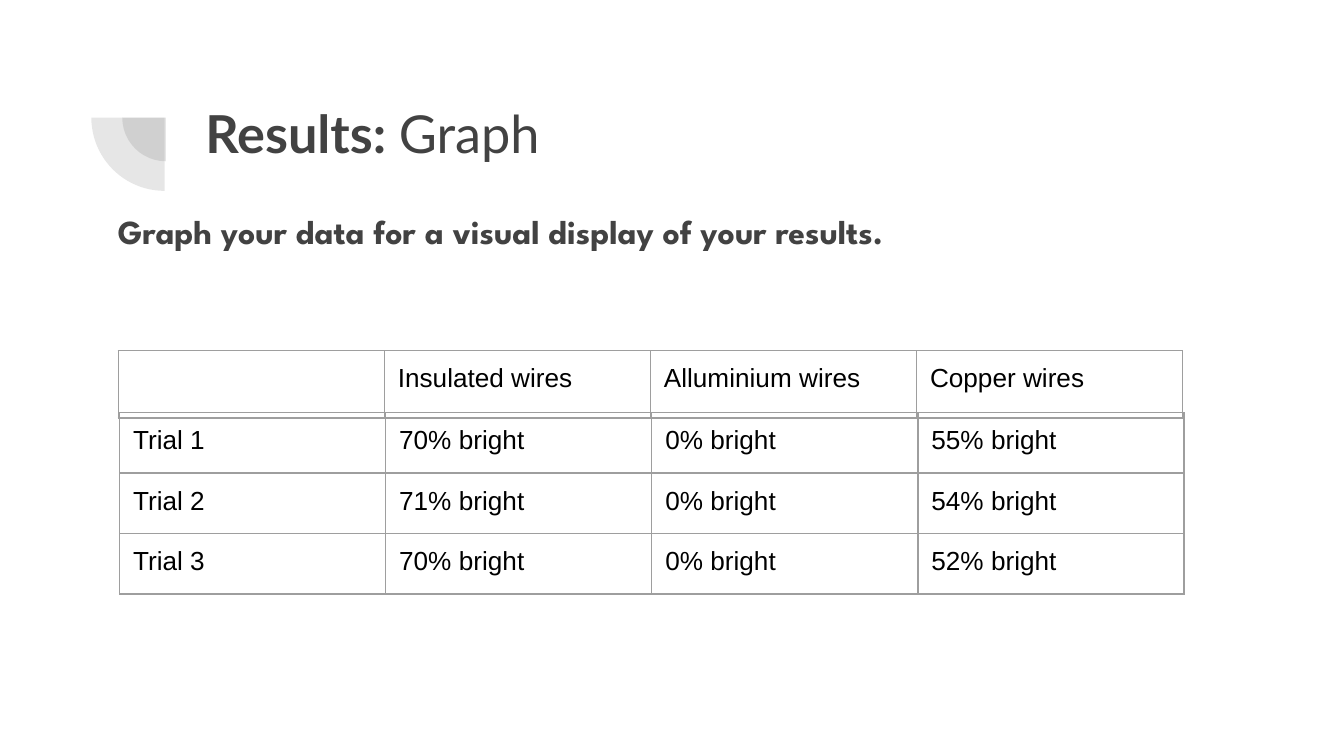
from lxml import etree
from pptx import Presentation
from pptx.dml.color import RGBColor
from pptx.enum.shapes import MSO_SHAPE
from pptx.oxml.ns import qn
from pptx.util import Inches, Pt

DARK_GRAY = RGBColor(0x42, 0x42, 0x42)
BORDER_GRAY = RGBColor(0x9E, 0x9E, 0x9E)
BLACK = RGBColor(0, 0, 0)

COLUMN_WIDTH = 1.98
INSET = Inches(0.1)

HEADINGS = [["", "Insulated wires", "Alluminium wires", "Copper wires"]]
TRIALS = [
    ["Trial 1", "70% bright", "0% bright", "55% bright"],
    ["Trial 2", "71% bright", "0% bright", "54% bright"],
    ["Trial 3", "70% bright", "0% bright", "52% bright"],
]


def add_run(paragraph, text, *, size, font, color, bold=False):
    run = paragraph.add_run()
    run.text = text
    run.font.size = Pt(size)
    run.font.name = font
    run.font.bold = bold
    run.font.color.rgb = color


def set_insets(holder):
    holder.margin_left = holder.margin_right = INSET
    holder.margin_top = holder.margin_bottom = INSET


def add_text_line(slide, left, top, width, height):
    """Add a wrapping text box and return its first paragraph."""
    frame = slide.shapes.add_textbox(
        Inches(left), Inches(top), Inches(width), Inches(height)).text_frame
    frame.word_wrap = True
    set_insets(frame)
    return frame.paragraphs[0]


def add_quarter(slide, left, top, diameter):
    """Add a translucent quarter disc, the lower left part of a circle."""
    quarter = slide.shapes.add_shape(
        MSO_SHAPE.PIE, Inches(left), Inches(top),
        Inches(diameter), Inches(diameter))
    quarter.rotation = 270
    quarter.adjustments[0] = 108
    quarter.adjustments[1] = 162
    quarter.shadow.inherit = False
    quarter.line.fill.background()
    quarter.fill.solid()
    quarter.fill.fore_color.rgb = DARK_GRAY
    color = quarter._element.spPr.find(".//" + qn("a:srgbClr"))
    etree.SubElement(color, qn("a:alpha"), val="13000")


def set_borders(cell):
    properties = cell._tc.get_or_add_tcPr()
    for position, side in enumerate(("a:lnL", "a:lnR", "a:lnT", "a:lnB")):
        line = etree.Element(qn(side), w=str(Pt(0.75)))
        fill = etree.SubElement(line, qn("a:solidFill"))
        etree.SubElement(fill, qn("a:srgbClr"), val=str(BORDER_GRAY))
        properties.insert(position, line)


def set_empty_font(paragraph, size, font):
    """Fix the line height of a paragraph that has no runs."""
    end = etree.SubElement(paragraph._p, qn("a:endParaRPr"), sz=str(size * 100))
    etree.SubElement(end, qn("a:latin"), typeface=font)


def add_grid(slide, left, top, row_height, rows):
    columns = len(rows[0])
    grid = slide.shapes.add_table(
        len(rows), columns, Inches(left), Inches(top),
        Inches(COLUMN_WIDTH * columns), Inches(row_height * len(rows))).table
    grid.first_row = grid.horz_banding = False
    for column in grid.columns:
        column.width = Inches(COLUMN_WIDTH)
    for row, values in zip(grid.rows, rows):
        row.height = Inches(row_height)
        for cell, value in zip(row.cells, values):
            set_insets(cell)
            cell.fill.background()
            set_borders(cell)
            paragraph = cell.text_frame.paragraphs[0]
            if value:
                add_run(paragraph, value, size=14, font="Arial", color=BLACK)
            else:
                set_empty_font(paragraph, 18, "Arial")


def main():
    presentation = Presentation()
    # Widescreen, 16:9
    presentation.slide_width = Inches(10)
    presentation.slide_height = Inches(10) * 9 // 16
    slide = presentation.slides.add_slide(presentation.slide_layouts[6])

    # Corner ornament
    add_quarter(slide, 0.91, 0.55, 0.65)
    add_quarter(slide, 0.68, 0.33, 1.09)

    # Title and instruction
    title = add_text_line(slide, 1.43, 0.65, 7.69, 1.09)
    add_run(title, "Results: ", size=28, font="Lato", color=DARK_GRAY, bold=True)
    add_run(title, "Graph", size=28, font="Lato", color=DARK_GRAY)
    instruction = add_text_line(slide, 0.78, 1.47, 8.44, 0.81)
    add_run(instruction, "Graph your data for a visual display of your results.",
            size=18, font="League Spartan", color=DARK_GRAY, bold=True)

    # Trial results and the separate heading row
    add_grid(slide, 0.89, 3.07, 0.45, TRIALS)
    add_grid(slide, 0.88, 2.61, 0.42, HEADINGS)

    presentation.save("out.pptx")


if __name__ == "__main__":
    main()
